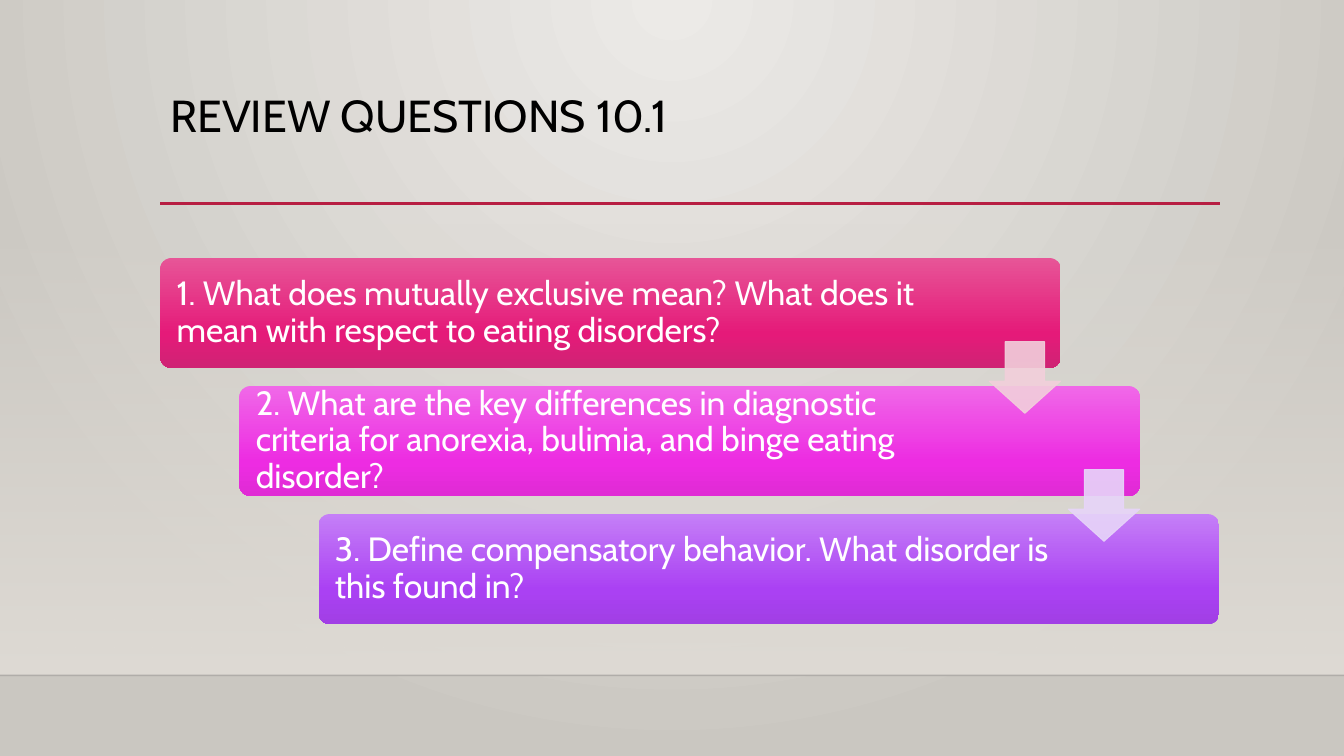
from lxml import etree
from pptx import Presentation
from pptx.dml.color import RGBColor
from pptx.enum.shapes import MSO_CONNECTOR, MSO_SHAPE
from pptx.enum.text import MSO_ANCHOR, PP_ALIGN
from pptx.oxml import parse_xml
from pptx.oxml.ns import nsdecls, qn
from pptx.util import Inches, Pt

TITLE = "REVIEW QUESTIONS 10.1"
QUESTIONS = [
    ("1. What does mutually exclusive mean? What does it mean with respect to eating disorders?",
     [(0, "E75597"), (69, "E51A79"), (100, "CF2374")], 7.75),
    ("2. What are the key differences in diagnostic criteria for anorexia, bulimia, and binge eating disorder?",
     [(0, "F068E8"), (69, "ED2CE2"), (100, "E02BD5")], 7.37),
    ("3. Define compensatory behavior. What disorder is this found in?",
     [(0, "C57FF7"), (69, "AA41F3"), (100, "A13FE5")], 7.37),
]
ARROW_COLORS = ["F2CFDB", "E7D5F9"]
BACKDROP = [(0, "ECEAE7"), (100, "CAC7C1")]
FLOOR = [(0, "DFDBD5", 0), (100, "DFDBD5")]

WIDTH, HEIGHT = 13.33, 7.5
LEFT, TOP = 1.59, 2.56
CARD_WIDTH, CARD_HEIGHT = 8.93, 1.09
STEP_X, STEP_Y = 0.785, 1.27
ARROW_SIZE, ARROW_TOP = 0.71, 3.39
TEXT_INSET = 0.13
DOWNWARD = '<a:lin ang="5400000" scaled="0"/>'
FROM_TOP = '<a:path path="circle"><a:fillToRect l="43000" t="0" r="43000" b="100000"/></a:path>'


def color(hex_color):
    return RGBColor.from_string(hex_color)


def set_alpha(fill, percent):
    choice = fill._xPr.find(qn("a:solidFill"))[0]
    etree.SubElement(choice, qn("a:alpha")).set("val", str(percent * 1000))


def set_gradient(fill, stops, direction=DOWNWARD):
    fill.solid()
    items = ""
    for position, hex_color, *alpha in stops:
        opacity = f'<a:alpha val="{alpha[0] * 1000}"/>' if alpha else ""
        items += f'<a:gs pos="{position * 1000}"><a:srgbClr val="{hex_color}">{opacity}</a:srgbClr></a:gs>'
    gradient = parse_xml(
        f'<a:gradFill {nsdecls("a")} rotWithShape="1"><a:gsLst>{items}</a:gsLst>{direction}</a:gradFill>')
    properties = fill._xPr
    properties.replace(properties.find(qn("a:solidFill")), gradient)


def add_shape(slide, kind, left, top, width, height):
    shape = slide.shapes.add_shape(kind, Inches(left), Inches(top), Inches(width), Inches(height))
    shape.shadow.inherit = False
    shape.line.fill.background()
    return shape


def add_line(slide, left, right, y, hex_color, width, alpha=100):
    connector = slide.shapes.add_connector(
        MSO_CONNECTOR.STRAIGHT, Inches(left), Inches(y), Inches(right), Inches(y))
    connector.line.color.rgb = color(hex_color)
    connector.line.width = Pt(width)
    if alpha < 100:
        set_alpha(connector.line.fill, alpha)
    etree.SubElement(connector._element.spPr, qn("a:effectLst"))


def write_text(shape, text, size, hex_color, anchor, left=0.1, right=0.1, vertical=0.05):
    frame = shape.text_frame
    frame.word_wrap = True
    frame.vertical_anchor = anchor
    frame.margin_left, frame.margin_right = Inches(left), Inches(right)
    frame.margin_top = frame.margin_bottom = Inches(vertical)
    paragraph = frame.paragraphs[0]
    paragraph.alignment = PP_ALIGN.LEFT
    paragraph.line_spacing = 0.9
    run = paragraph.add_run()
    run.text = text
    run.font.name = "Cabin"
    run.font.size = Pt(size)
    run.font.color.rgb = color(hex_color)


def main():
    presentation = Presentation()
    presentation.slide_width, presentation.slide_height = Inches(WIDTH), Inches(HEIGHT)
    slide = presentation.slides.add_slide(presentation.slide_layouts[6])
    set_gradient(slide.background.fill, BACKDROP, FROM_TOP)

    floor = add_shape(slide, MSO_SHAPE.RECTANGLE, 0, 2.21, WIDTH, 4.49)
    set_gradient(floor.fill, FLOOR)
    add_line(slide, 0, WIDTH, 6.7, "000001", 1, alpha=20)
    add_line(slide, LEFT, 12.1, 2.02, "B71E42", 2.5)

    title = slide.shapes.add_textbox(Inches(LEFT), Inches(0.88), Inches(10.5), Inches(1.15))
    write_text(title, TITLE, 32, "000000", MSO_ANCHOR.TOP)

    for index, (question, stops, text_width) in enumerate(QUESTIONS):
        card = add_shape(slide, MSO_SHAPE.ROUNDED_RECTANGLE, LEFT + index * STEP_X,
                         TOP + index * STEP_Y, CARD_WIDTH, CARD_HEIGHT)
        card.adjustments[0] = 0.1
        set_gradient(card.fill, stops)
        write_text(card, question, 24, "FFFFFF", MSO_ANCHOR.MIDDLE, left=TEXT_INSET,
                   right=CARD_WIDTH - text_width + 0.07, vertical=0)

    for index, hex_color in enumerate(ARROW_COLORS):
        right = LEFT + index * STEP_X + CARD_WIDTH
        arrow = add_shape(slide, MSO_SHAPE.DOWN_ARROW, right - ARROW_SIZE,
                          ARROW_TOP + index * STEP_Y, ARROW_SIZE, ARROW_SIZE)
        arrow.adjustments[0], arrow.adjustments[1] = 0.45, 0.55
        arrow.adjustments[0], arrow.adjustments[1] = 0.55, 0.45
        arrow.line.width = Pt(0.75)
        for fill in (arrow.fill, arrow.line.fill):
            fill.solid()
            fill.fore_color.rgb = color(hex_color)
            set_alpha(fill, 90)

    presentation.save("out.pptx")


if __name__ == "__main__":
    main()
